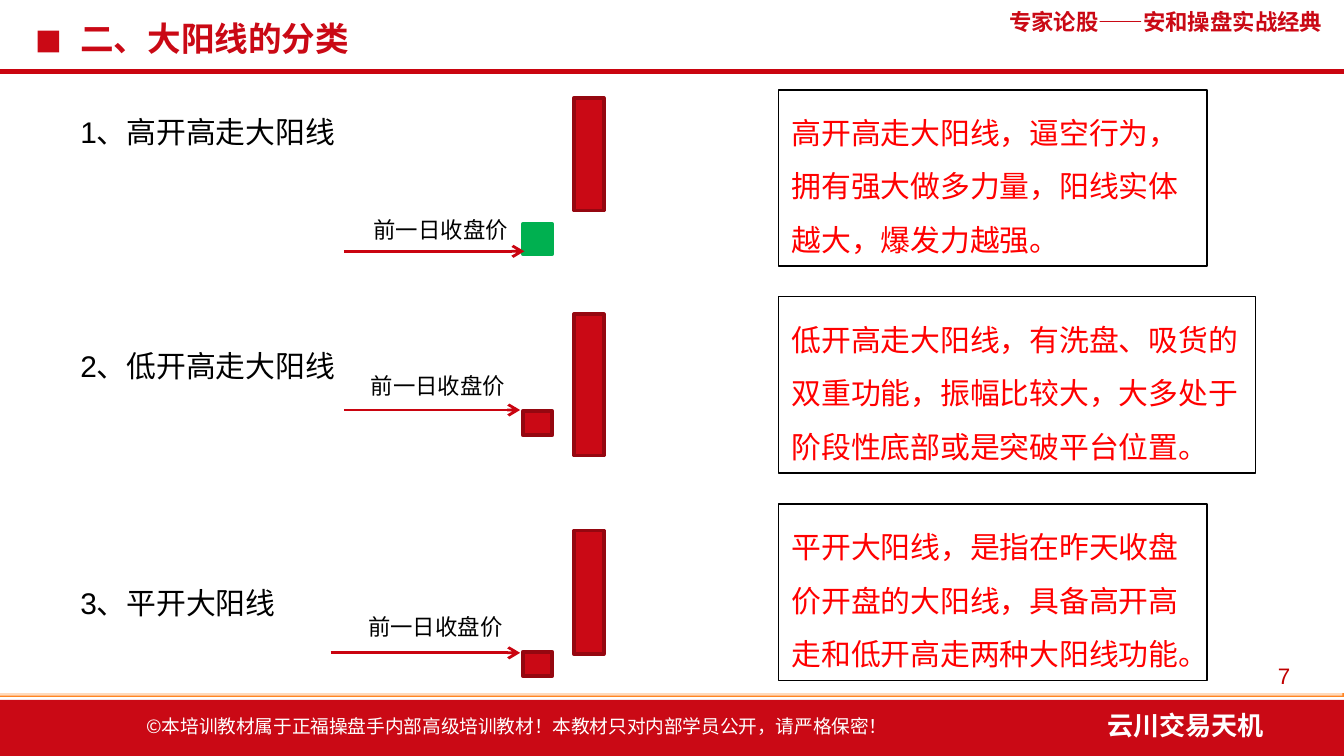
from dataclasses import dataclass

from lxml.etree import SubElement
from pptx import Presentation
from pptx.dml.color import RGBColor
from pptx.enum.shapes import MSO_CONNECTOR, MSO_SHAPE
from pptx.enum.text import MSO_ANCHOR, PP_ALIGN
from pptx.oxml.ns import qn
from pptx.util import Cm, Pt


@dataclass(frozen=True)
class Theme:
    red: str = "CA0915"
    rule_red: str = "CA0410"
    dark_red: str = "950710"
    number_red: str = "C00000"
    text_red: str = "FF0000"
    green: str = "00B050"
    orange: str = "FF8421"
    white: str = "FFFFFF"
    black: str = "000000"
    latin: str = "Arial"
    chinese: str = "Noto Sans CJK SC"
    title: int = 18
    body: int = 16
    brand: int = 14
    small: int = 12
    footer: int = 10


theme = Theme()
presentation = Presentation()
presentation.slide_width, presentation.slide_height = Cm(25.4), Cm(14.29)
slide = presentation.slides.add_slide(presentation.slide_layouts[6])


def add_text(text, x, y, w, h, size, color, font=theme.latin, bold=False, wrap=True):
    box = slide.shapes.add_textbox(Cm(x), Cm(y), Cm(w), Cm(h))
    box.text_frame.word_wrap = wrap
    box.text_frame.text = text
    run = box.text_frame.paragraphs[0].runs[0]
    run.font.size, run.font.bold, run.font.name = Pt(size), bold, font
    run.font.color.rgb = RGBColor.from_string(color)
    SubElement(run.font._element, qn("a:ea"), typeface=theme.chinese)
    return box


def add_line(x1, x2, y, color, width, arrow=False):
    line = slide.shapes.add_connector(MSO_CONNECTOR.STRAIGHT, Cm(x1), Cm(y), Cm(x2), Cm(y))
    line.line.color.rgb = RGBColor.from_string(color)
    line.line.width = Pt(width)
    if arrow:
        SubElement(line.line._get_or_add_ln(), qn("a:tailEnd"), type="arrow")
    SubElement(line._element.spPr, qn("a:effectLst"))


# One row per type of candle: label, candle and previous day (top, height),
# arrow (start, end, height), caption (left, top), description
rows = [
    dict(label=("1、高开高走大阳线", 2.03, 5.33), candle=(1.85, 2.13), previous=(4.24, 0.56),
         previous_colors=(theme.green, theme.green), arrow=(6.5, 9.91, 4.75), caption=(6.81, 3.96),
         description=("高开高走大阳线，逼空行为，拥有强大做多力量，阳线实体越大，爆发力越强。", 1.7, 8.1)),
    dict(label=("2、低开高走大阳线", 6.45, 5.33), candle=(5.94, 2.67), previous=(7.77, 0.46),
         previous_colors=(theme.red, theme.dark_red), arrow=(6.5, 9.83, 7.75), caption=(6.76, 6.91),
         description=("低开高走大阳线，有洗盘、吸货的双重功能，振幅比较大，大多处于阶段性底部或是突破平台位置。", 5.61, 9.02)),
    dict(label=("3、平开大阳线", 10.92, 4.22), candle=(10.03, 2.34), previous=(12.32, 0.46),
         previous_colors=(theme.red, theme.dark_red), arrow=(6.25, 9.83, 12.34), caption=(6.71, 11.46),
         description=("平开大阳线，是指在昨天收盘价开盘的大阳线，具备高开高走和低开高走两种大阳线功能。", 9.53, 8.1)),
]

# Footer rule, then footer band, white veil, title marker and candles
add_line(0, 25.4, 13.13, theme.orange, 2.25)
blocks = [
    (-0.03, 13.23, 25.43, 1.09, theme.red, None),
    (-0.03, -0.05, 25.4, 13.2, theme.white, None),
    (0.71, 0.58, 0.41, 0.41, theme.red, None),
]
for row in rows:
    candle_top, candle_height = row["candle"]
    previous_top, previous_height = row["previous"]
    blocks.append((10.85, candle_top, 0.56, candle_height, theme.red, theme.dark_red))
    blocks.append((9.88, previous_top, 0.56, previous_height, *row["previous_colors"]))
for x, y, w, h, fill, outline in blocks:
    block = slide.shapes.add_shape(MSO_SHAPE.RECTANGLE, Cm(x), Cm(y), Cm(w), Cm(h))
    block.shadow.inherit = False
    block.fill.solid()
    block.fill.fore_color.rgb = RGBColor.from_string(fill)
    if outline:
        block.line.color.rgb = RGBColor.from_string(outline)
        block.line.width = Pt(2)
    else:
        block.line.fill.background()
    if fill == theme.white:
        veil_color = block._element.spPr.find(qn("a:solidFill"))[0]
        SubElement(veil_color, qn("a:alpha"), val="70000")

# Header
add_line(-0.03, 25.43, 1.35, theme.rule_red, 3)
title = add_text("二、大阳线的分类", 1.27, 0.2, 16.56, 1.04, theme.title, theme.red, bold=True)
title.text_frame.vertical_anchor = MSO_ANCHOR.MIDDLE
add_text("专家论股——安和操盘实战经典", 18.82, 0.03, 6.63, 0.76, theme.small, theme.red,
         theme.chinese, bold=True)

# Footer
brand = add_text("云川交易天机", 19.63, 13.28, 5.56, 0.86, theme.brand, theme.white,
                 theme.chinese, bold=True)
brand.text_frame.paragraphs[0].alignment = PP_ALIGN.CENTER
copyright_line = add_text("©本培训教材属于正福操盘手内部高级培训教材！本教材只对内部学员公开，请严格保密！",
                          2.77, 13.39, 17.12, 0.64, theme.footer, theme.white, theme.chinese)
copyright_line.text_frame.margin_left = 0
add_text("7", 23.9, 12.4, 2.08, 0.76, theme.small, theme.number_red)

# Labels, arrows, captions and descriptions
for row in rows:
    label, label_top, label_width = row["label"]
    add_text(label, 1.27, label_top, label_width, 0.94, theme.body, theme.black)
    add_line(*row["arrow"], theme.rule_red, 1.5, arrow=True)
    add_text("前一日收盘价", *row["caption"], 3.05, 0.76, theme.small, theme.black, wrap=False)
    description, description_top, description_width = row["description"]
    panel = add_text(description, 14.71, description_top, description_width, 3.33,
                     theme.body, theme.text_red)
    panel.text_frame.paragraphs[0].line_spacing = 1.5
    panel.line.color.rgb = RGBColor.from_string(theme.black)
    panel.line.width = Pt(0.75)

presentation.save("out.pptx")
